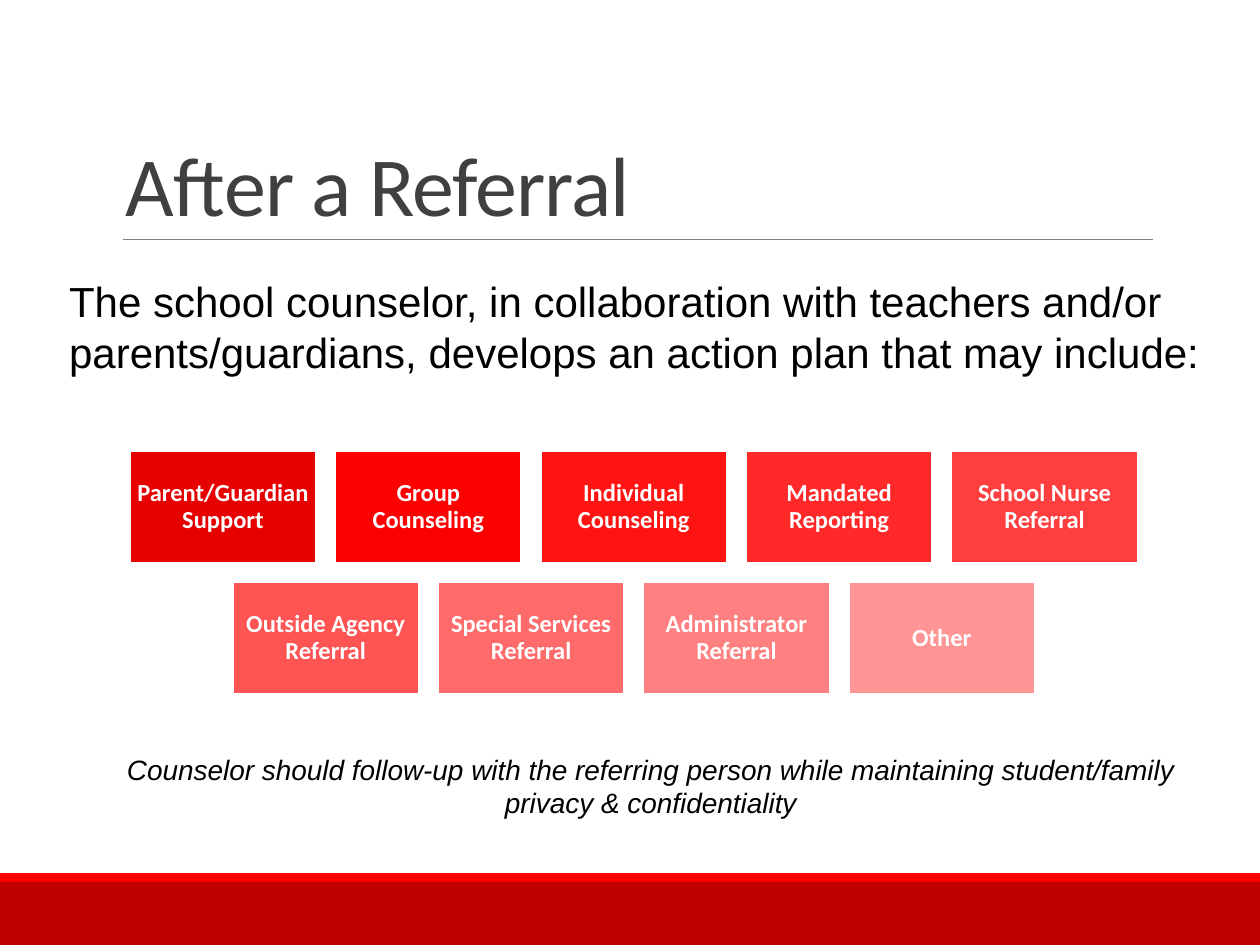
from pptx import Presentation
from pptx.dml.color import RGBColor
from pptx.enum.shapes import MSO_CONNECTOR, MSO_SHAPE
from pptx.enum.text import MSO_ANCHOR, PP_ALIGN
from pptx.oxml.ns import qn
from pptx.util import Inches, Pt
from lxml.etree import SubElement

WHITE = RGBColor(255, 255, 255)
BLACK = RGBColor(0, 0, 0)
DARK = RGBColor(64, 64, 64)
GRAY = RGBColor(128, 128, 128)
RED = RGBColor(255, 0, 0)
CRIMSON = RGBColor(192, 0, 0)
TINTS = [
    RGBColor(231, 0, 0), RGBColor(253, 0, 0), RGBColor(255, 20, 20),
    RGBColor(255, 41, 41), RGBColor(255, 63, 63), RGBColor(255, 84, 84),
    RGBColor(255, 106, 106), RGBColor(255, 128, 128), RGBColor(255, 149, 149),
]
ROWS = [
    ["Parent/Guardian Support", "Group Counseling", "Individual Counseling",
     "Mandated Reporting", "School Nurse Referral"],
    ["Outside Agency Referral", "Special Services Referral",
     "Administrator Referral", "Other"],
]
MIDDLE, TOP = 5.03, 3.58
WIDE, HIGH = 1.48, 0.89
STEP, DROP = 1.63, 1.04


class Deck:
    body = "Arial"
    head = "Calibri"

    def __init__(self, slide):
        self.slide = slide

    def label(self, shape, text, size, font, color, align=PP_ALIGN.LEFT,
              anchor=MSO_ANCHOR.TOP, space=1.0, bold=False, italic=False):
        frame = shape.text_frame
        frame.word_wrap = True
        frame.vertical_anchor = anchor
        frame.text = text
        line = frame.paragraphs[0]
        line.alignment = align
        line.line_spacing = space
        run = line.runs[0]
        run.font.size = Pt(size)
        run.font.name = font
        run.font.color.rgb = color
        run.font.bold = bold
        run.font.italic = italic
        return run

    def text(self, x, y, w, h, *words, **style):
        box = self.slide.shapes.add_textbox(
            Inches(x), Inches(y), Inches(w), Inches(h))
        return self.label(box, *words, **style)

    def rect(self, x, y, w, h, fill):
        shape = self.slide.shapes.add_shape(
            MSO_SHAPE.RECTANGLE, Inches(x), Inches(y), Inches(w), Inches(h))
        shape.shadow.inherit = False
        shape.fill.solid()
        shape.fill.fore_color.rgb = fill
        shape.line.fill.background()
        return shape

    def card(self, x, y, text, fill):
        shape = self.rect(x, y, WIDE, HIGH, fill)
        shape.line.color.rgb = WHITE
        shape.line.width = Pt(1.25)
        frame = shape.text_frame
        frame.margin_left = frame.margin_right = Inches(0.05)
        frame.margin_top = frame.margin_bottom = Inches(0.06)
        self.label(shape, text, 14, self.head, WHITE, PP_ALIGN.CENTER,
                   MSO_ANCHOR.MIDDLE, 0.9, bold=True)

    def rule(self, x, y, end):
        line = self.slide.shapes.add_connector(
            MSO_CONNECTOR.STRAIGHT, Inches(x), Inches(y), Inches(end), Inches(y))
        line.line.color.rgb = GRAY
        line.line.width = Pt(0.5)
        SubElement(line._element.spPr, qn("a:effectLst"))


def main():
    show = Presentation()
    show.slide_width = Inches(10)
    show.slide_height = Inches(7.5)
    deck = Deck(show.slides.add_slide(show.slide_layouts[6]))
    deck.rect(0, 7, 10, 0.5, CRIMSON)
    deck.rect(0, 6.93, 10, 0.07, RED)
    deck.rule(0.98, 1.9, 9.15)
    title = deck.text(0.9, 0.31, 8.25, 1.59, "After a Referral", 48, deck.head,
                      DARK, anchor=MSO_ANCHOR.BOTTOM, space=0.85)
    title._r.get_or_add_rPr().set("spc", "-50")
    deck.text(0.67, 5.92, 8.99, 0.64,
              "Counselor should follow-up with the referring person while "
              "maintaining student/family privacy & confidentiality",
              16, deck.body, BLACK, align=PP_ALIGN.CENTER, italic=True)
    deck.text(0.45, 2.14, 9.58, 0.91,
              "The school counselor, in collaboration with teachers and/or "
              "parents/guardians, develops an action plan that may include:",
              24, deck.body, BLACK)
    tints = iter(TINTS)
    for row, names in enumerate(ROWS):
        left = MIDDLE - ((len(names) - 1) * STEP + WIDE) / 2
        for col, name in enumerate(names):
            deck.card(left + col * STEP, TOP + row * DROP, name, next(tints))
    show.save("out.pptx")


if __name__ == "__main__":
    main()
